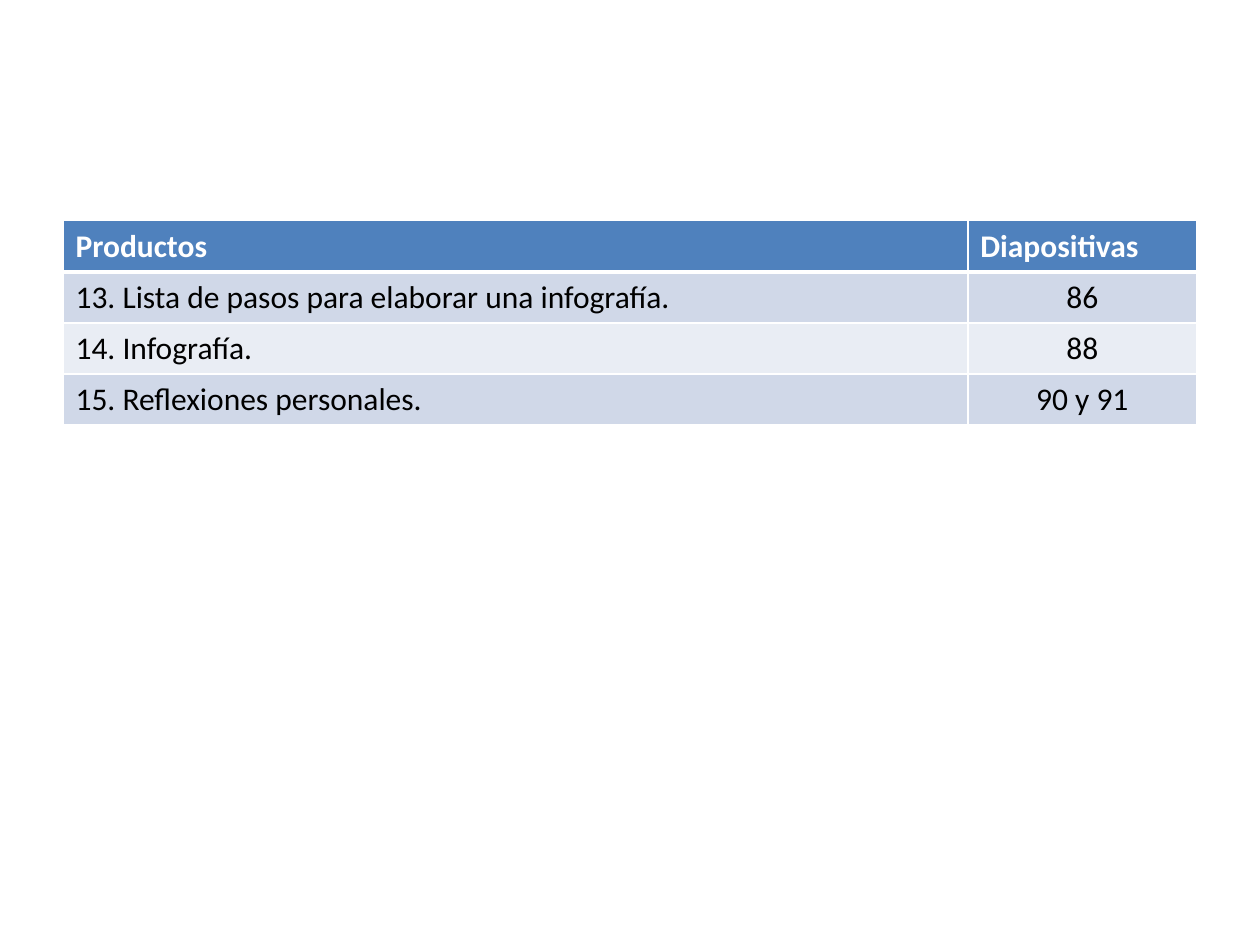
from lxml import etree
from pptx import Presentation
from pptx import util as u
from pptx.dml.color import RGBColor
from pptx.enum import text
from pptx.oxml.ns import qn

HEADER = ("Productos", "Diapositivas")
PRODUCTS = [
    ("13. Lista de pasos para elaborar una infografía.", "86"),
    ("14. Infografía.", "88"),
    ("15. Reflexiones personales.", "90 y 91"),
]
COLORS = {
    "header": "4F81BD",
    "odd": "D0D8E8",
    "even": "E9EDF4",
    "white": "FFFFFF",
    "black": "000000",
}
FONT, FONT_SIZE = "Calibri", 18
LEFT, TOP = 1.27, 4.45
COLUMN_WIDTHS = (18.24, 4.62)
ROW_HEIGHT = 1.03


def set_borders(cell, widths):
    """Draw white borders; widths maps L, R, T and B to points."""
    properties = cell._tc.get_or_add_tcPr()
    for position, (side, width) in enumerate(widths.items()):
        line = etree.Element(qn(f"a:ln{side}"), w=str(u.Pt(width)))
        fill = etree.SubElement(line, qn("a:solidFill"))
        etree.SubElement(fill, qn("a:srgbClr"), val=COLORS["white"])
        properties.insert(position, line)


def format_cell(cell, content, row, column):
    is_header = row == 0
    fill_name = "header" if is_header else "odd" if row % 2 else "even"
    cell.fill.solid()
    cell.fill.fore_color.rgb = RGBColor.from_string(COLORS[fill_name])
    set_borders(cell, {"L": 1, "R": 1, "T": 3 if row == 1 else 1,
                       "B": 3 if is_header else 1})

    cell.text_frame.text = content
    paragraph = cell.text_frame.paragraphs[0]
    if column == 1 and not is_header:
        paragraph.alignment = text.PP_ALIGN.CENTER
    font = paragraph.runs[0].font
    font.name, font.size, font.bold = FONT, u.Pt(FONT_SIZE), is_header
    font.color.rgb = RGBColor.from_string(
        COLORS["white" if is_header else "black"])


def main():
    presentation = Presentation()
    presentation.slide_width, presentation.slide_height = u.Cm(25.4), u.Cm(19.05)
    slide = presentation.slides.add_slide(presentation.slide_layouts[6])

    rows = [HEADER, *PRODUCTS]
    table = slide.shapes.add_table(
        len(rows), len(HEADER), u.Cm(LEFT), u.Cm(TOP),
        u.Cm(sum(COLUMN_WIDTHS)), u.Cm(ROW_HEIGHT * len(rows))).table
    for column, width in zip(table.columns, COLUMN_WIDTHS):
        column.width = u.Cm(width)
    for row, contents in enumerate(rows):
        table.rows[row].height = u.Cm(ROW_HEIGHT)
        for column, content in enumerate(contents):
            format_cell(table.cell(row, column), content, row, column)

    presentation.save("out.pptx")


if __name__ == "__main__":
    main()
